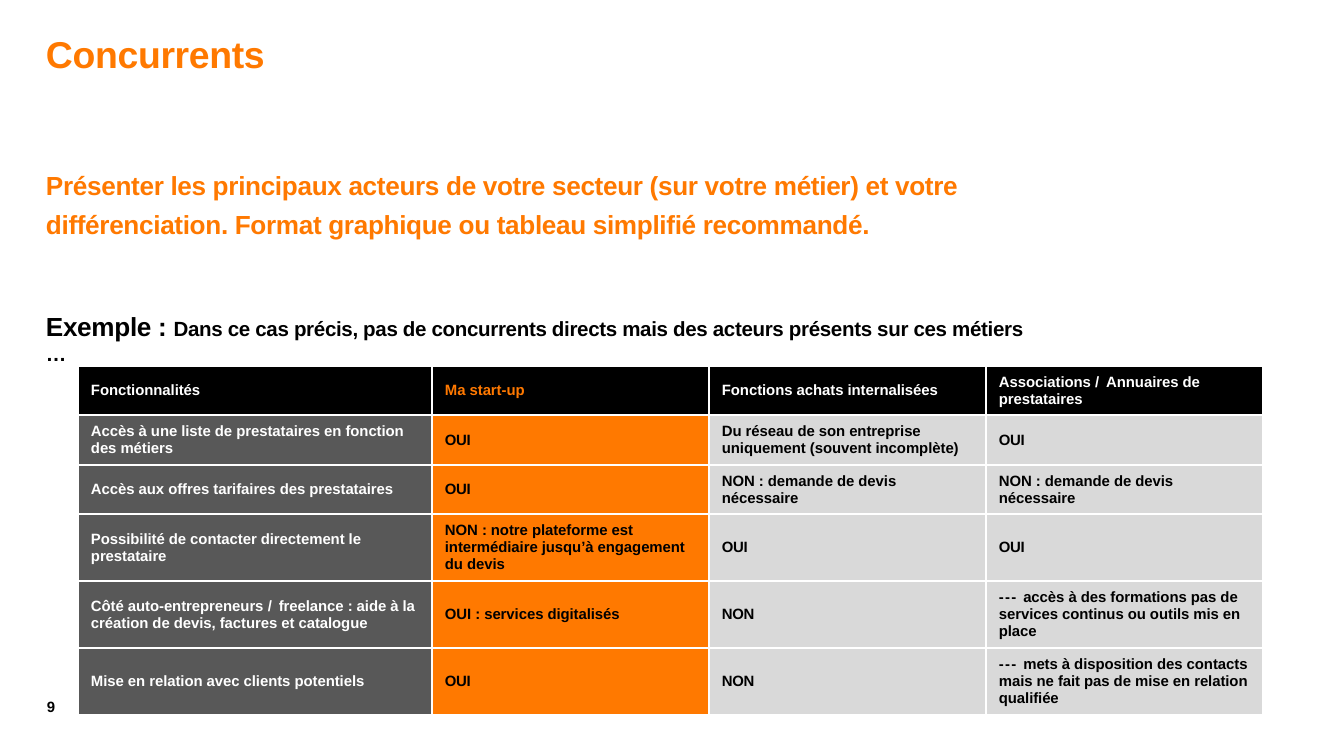
import dataclasses

import lxml.etree
import pptx
import pptx.dml.color
import pptx.enum.text
import pptx.oxml.ns
import pptx.util

EMU_PER_PX = 914400 / 134.4
FONT = "Arial"
ORANGE, BLACK, WHITE = "FF7900", "000000", "FFFFFF"
DARK_GREY, LIGHT_GREY = "585858", "D9D9D9"
WIDE_MARKERS = ("/ ", "--- ")


@dataclasses.dataclass
class Box:
    left: int
    top: int
    width: int
    height: int


@dataclasses.dataclass
class Piece:
    text: str
    size: int
    color: str
    spacing: float = -0.2


@dataclasses.dataclass
class Column:
    width: int
    fill: str
    color: str
    header_color: str


COLUMNS = [
    Column(354, DARK_GREY, WHITE, WHITE),
    Column(277, ORANGE, BLACK, ORANGE),
    Column(277, LIGHT_GREY, BLACK, WHITE),
    Column(277, LIGHT_GREY, BLACK, WHITE),
]
ROW_HEIGHTS = [49, 50, 49, 67, 67, 67]
ROWS = [
    ["Fonctionnalités", "Ma start-up", "Fonctions achats internalisées",
     "Associations / Annuaires de prestataires"],
    ["Accès à une liste de prestataires en fonction des métiers", "OUI",
     "Du réseau de son entreprise uniquement (souvent incomplète)", "OUI"],
    ["Accès aux offres tarifaires des prestataires", "OUI",
     "NON : demande de devis nécessaire", "NON : demande de devis nécessaire"],
    ["Possibilité de contacter directement le prestataire",
     "NON : notre plateforme est intermédiaire jusqu’à engagement du devis", "OUI", "OUI"],
    ["Côté auto-entrepreneurs / freelance : aide à la création de devis, factures et catalogue",
     "OUI : services digitalisés", "NON",
     "--- accès à des formations pas de services continus ou outils mis en place"],
    ["Mise en relation avec clients potentiels", "OUI", "NON",
     "--- mets à disposition des contacts mais ne fait pas de mise en relation qualifiée"],
]


def px(length: int) -> int:
    return round(length * EMU_PER_PX)


def rgb(color: str) -> pptx.dml.color.RGBColor:
    return pptx.dml.color.RGBColor.from_string(color)


def write(paragraph, pieces: list[Piece]) -> None:
    for piece in pieces:
        run = paragraph.add_run()
        run.text = piece.text
        font = run.font
        font.name, font.size, font.bold = FONT, pptx.util.Pt(piece.size), True
        font.color.rgb = rgb(piece.color)
        run._r.get_or_add_rPr().set("spc", str(round(piece.spacing * 100)))
    paragraph.alignment = pptx.enum.text.PP_ALIGN.LEFT


def fill_text_shape(shape, box: Box, pieces: list[Piece], line_spacing=1.0, indent: int = 1) -> None:
    shape.left, shape.top = px(box.left), px(box.top)
    shape.width, shape.height = px(box.width), px(box.height)
    frame = shape.text_frame
    frame.word_wrap = True
    frame.auto_size = pptx.enum.text.MSO_AUTO_SIZE.NONE
    frame.vertical_anchor = pptx.enum.text.MSO_ANCHOR.TOP
    frame.margin_left = frame.margin_right = frame.margin_bottom = 0
    frame.margin_top = px(1)
    paragraph = frame.paragraphs[0]
    write(paragraph, pieces)
    paragraph.space_before = pptx.util.Pt(1)
    paragraph.line_spacing = line_spacing
    properties = paragraph._p.get_or_add_pPr()
    properties.set("marL", str(px(indent)))
    properties.set("indent", "0")
    lxml.etree.SubElement(properties, pptx.oxml.ns.qn("a:buNone"))


def add_white_borders(cell) -> None:
    properties = cell._tc.get_or_add_tcPr()
    for side in ("lnL", "lnR", "lnT", "lnB"):
        line = lxml.etree.SubElement(properties, pptx.oxml.ns.qn(f"a:{side}"), w="12700")
        fill = lxml.etree.SubElement(line, pptx.oxml.ns.qn("a:solidFill"))
        lxml.etree.SubElement(fill, pptx.oxml.ns.qn("a:srgbClr"), val=WHITE)


def cell_pieces(text: str, color: str) -> list[Piece]:
    """Give a slash or a row of dashes wider letter spacing."""
    for marker in WIDE_MARKERS:
        if marker in text:
            before, _, after = text.partition(marker)
            parts = [Piece(before, 8, color, -0.05), Piece(marker, 8, color, 0.7),
                     Piece(after, 8, color, -0.05)]
            return [part for part in parts if part.text]
    return [Piece(text, 8, color, -0.2 if text in ("OUI", "NON") else -0.05)]


def add_comparison_table(slide, left: int, top: int) -> None:
    width = sum(column.width for column in COLUMNS)
    table = slide.shapes.add_table(len(ROWS), len(COLUMNS), px(left), px(top),
                                   px(width), px(sum(ROW_HEIGHTS))).table
    table.first_row = table.horz_banding = False
    for index, column in enumerate(COLUMNS):
        table.columns[index].width = px(column.width)
    for row_index, (height, texts) in enumerate(zip(ROW_HEIGHTS, ROWS)):
        table.rows[row_index].height = px(height)
        is_header = row_index == 0
        for column_index, (column, text) in enumerate(zip(COLUMNS, texts)):
            cell = table.cell(row_index, column_index)
            add_white_borders(cell)
            cell.fill.solid()
            cell.fill.fore_color.rgb = rgb(BLACK if is_header else column.fill)
            cell.margin_left = cell.margin_right = px(13)
            cell.margin_top = cell.margin_bottom = 0
            cell.vertical_anchor = pptx.enum.text.MSO_ANCHOR.MIDDLE
            color = column.header_color if is_header else column.color
            write(cell.text_frame.paragraphs[0], cell_pieces(text, color))


def main() -> None:
    presentation = pptx.Presentation()
    presentation.slide_width, presentation.slide_height = px(1344), px(756)
    slide = presentation.slides.add_slide(presentation.slide_layouts[1])

    # Title and instruction
    fill_text_shape(slide.shapes.title, Box(45, 30, 841, 71), [Piece("Concurrents", 20, ORANGE)])
    instruction = ("Présenter les principaux acteurs de votre secteur (sur votre métier) et votre "
                   "différenciation. Format graphique ou tableau simplifié recommandé.")
    fill_text_shape(slide.placeholders[1], Box(45, 160, 1095, 82),
                    [Piece(instruction, 14, ORANGE)], line_spacing=1.26)

    # Example heading and slide number
    example = [
        Piece("Exemple : ", 14, BLACK),
        Piece("Dans ce cas précis, pas de concurrents directs mais des acteurs présents "
              "sur ces métiers …", 11, BLACK),
    ]
    fill_text_shape(slide.shapes.add_textbox(0, 0, 0, 0), Box(45, 309, 990, 35), example)
    fill_text_shape(slide.shapes.add_textbox(0, 0, 0, 0), Box(42, 698, 24, 19),
                    [Piece("9", 8, BLACK)], line_spacing=pptx.util.Pt(9), indent=5)

    # Competitor comparison
    add_comparison_table(slide, 78, 366)
    presentation.save("out.pptx")


if __name__ == "__main__":
    main()
